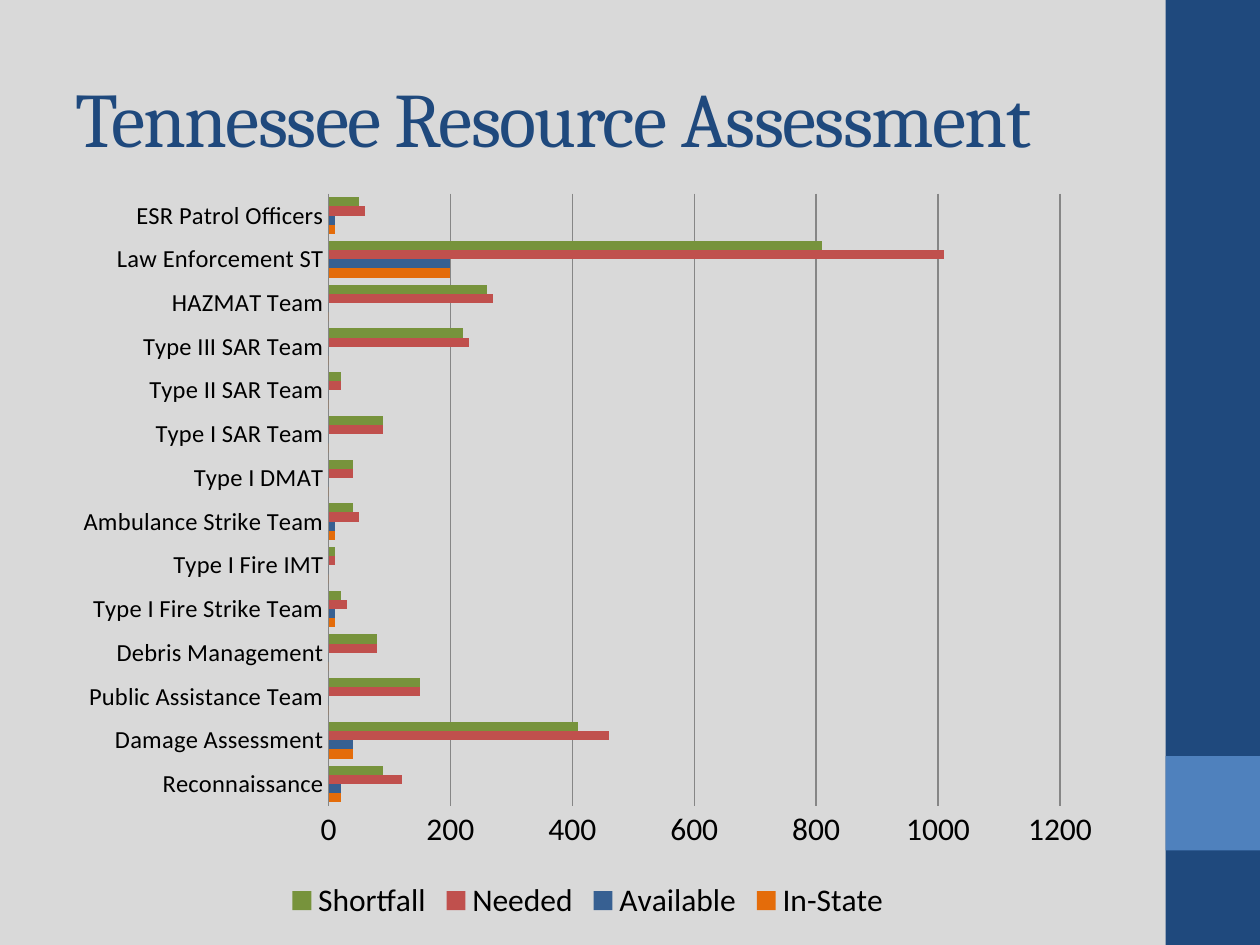
from dataclasses import dataclass

from lxml import etree
from pptx import Presentation
from pptx import util as u
from pptx.chart.data import CategoryChartData
from pptx.dml.color import RGBColor
from pptx.enum import chart as ch, shapes, text
from pptx.oxml.ns import qn

WIDTH, HEIGHT = u.Inches(10), u.Inches(7.5)
COLORS = {
    "background": "D9D9D9", "navy": "1F497D", "blue": "4F81BD",
    "text": "000000", "grid": "868686",
    "in_state": "E46C0A", "available": "376092",
    "needed": "C0504D", "shortfall": "77933C",
}


@dataclass
class Box:
    """Place and size as shares of the slide."""
    x: float
    y: float
    w: float
    h: float

    def emu(self) -> tuple[int, int, int, int]:
        return (int(self.x * WIDTH), int(self.y * HEIGHT),
                int(self.w * WIDTH), int(self.h * HEIGHT))


@dataclass
class Band:
    box: Box
    color: str


@dataclass
class Series:
    name: str
    color: str
    values: list[int]


BANDS = [
    Band(Box(0.925, 0, 0.075, 1), "navy"),
    Band(Box(0.925, 0.8, 0.075, 0.1), "blue"),
]
TITLE_BOX = Box(0.05, 0.04, 0.833, 1 / 6)
CHART_BOX = Box(0.05, 0.19, 0.833, 0.79)
PLOT_BOX = Box(0.253, 0.019, 0.697, 0.82)  # shares of the chart

CATEGORIES = [
    "Reconnaissance", "Damage Assessment", "Public Assistance Team",
    "Debris Management", "Type I Fire Strike Team", "Type I Fire IMT",
    "Ambulance Strike Team", "Type I DMAT", "Type I SAR Team",
    "Type II SAR Team", "Type III SAR Team", "HAZMAT Team",
    "Law Enforcement ST", "ESR Patrol Officers",
]
ON_HAND = [20, 40, 0, 0, 10, 0, 10, 0, 0, 0, 0, 0, 200, 10]
SERIES = [
    Series("In-State", "in_state", ON_HAND),
    Series("Available", "available", ON_HAND),
    Series("Needed", "needed",
           [120, 460, 150, 80, 30, 10, 50, 40, 90, 20, 230, 270, 1010, 60]),
    Series("Shortfall", "shortfall",
           [90, 410, 150, 80, 20, 10, 40, 40, 90, 20, 220, 260, 810, 50]),
]


def rgb(name: str) -> RGBColor:
    return RGBColor.from_string(COLORS[name])


def set_fill(fill, color: str) -> None:
    fill.solid()
    fill.fore_color.rgb = rgb(color)


def set_font(font, name: str, size: float, color: str) -> None:
    font.name, font.size, font.bold = name, u.Pt(size), False
    font.color.rgb = rgb(color)


def add_band(slide, band: Band) -> None:
    sp = slide.shapes.add_shape(shapes.MSO_SHAPE.RECTANGLE, *band.box.emu())
    sp.shadow.inherit = False
    set_fill(sp.fill, band.color)
    sp.line.fill.background()


def add_title(slide, wording: str) -> None:
    tf = slide.shapes.add_textbox(*TITLE_BOX.emu()).text_frame
    tf.word_wrap = True
    tf.vertical_anchor = text.MSO_ANCHOR.MIDDLE
    p = tf.paragraphs[0]
    r = p.add_run()
    r.text = wording
    set_font(p.font, "Cambria", 44, "navy")
    set_font(r.font, "Cambria", 44, "navy")
    r.font._element.set("spc", "-100")


def place_plot(chart, box: Box) -> None:
    """Fix the inner plot area, so the axis labels fall outside it."""
    plot_area = chart._chartSpace.chart.plotArea
    for old in plot_area.findall(qn("c:layout")):
        plot_area.remove(old)
    layout = etree.Element(qn("c:layout"))
    manual = etree.SubElement(layout, qn("c:manualLayout"))
    settings = {"layoutTarget": "inner", "xMode": "edge", "yMode": "edge",
                "x": box.x, "y": box.y, "w": box.w, "h": box.h}
    for tag, value in settings.items():
        etree.SubElement(manual, qn(f"c:{tag}")).set("val", str(value))
    plot_area.insert(0, layout)


def add_resource_chart(slide) -> None:
    data = CategoryChartData()
    data.categories = CATEGORIES
    for s in SERIES:
        data.add_series(s.name, s.values)
    chart = slide.shapes.add_chart(
        ch.XL_CHART_TYPE.BAR_CLUSTERED, *CHART_BOX.emu(), data).chart
    set_font(chart.font, "Calibri", 18, "text")
    chart.has_title = False
    chart.has_legend = True
    chart.legend.position = ch.XL_LEGEND_POSITION.BOTTOM
    chart.legend.include_in_layout = False

    plot = chart.plots[0]
    plot.gap_width, plot.overlap, plot.vary_by_categories = 75, 0, False
    for bars, s in zip(plot.series, SERIES):
        set_fill(bars.format.fill, s.color)

    cat, val = chart.category_axis, chart.value_axis
    for axis in (cat, val):
        axis.major_tick_mark = axis.minor_tick_mark = ch.XL_TICK_MARK.NONE
    set_font(cat.tick_labels.font, "Calibri", 14, "text")
    cat.has_major_gridlines = False
    val.has_major_gridlines = True
    val.minimum_scale, val.maximum_scale, val.major_unit = 0, 1200, 200
    val.format.line.fill.background()
    for line in (cat.format.line, val.major_gridlines.format.line):
        line.color.rgb = rgb("grid")
        line.width = u.Pt(0.75)
    place_plot(chart, PLOT_BOX)


def main() -> None:
    prs = Presentation()
    prs.slide_width, prs.slide_height = WIDTH, HEIGHT
    slide = prs.slides.add_slide(prs.slide_layouts[6])
    set_fill(slide.background.fill, "background")
    for band in BANDS:
        add_band(slide, band)
    add_title(slide, "Tennessee Resource Assessment")
    add_resource_chart(slide)
    prs.save("out.pptx")


if __name__ == "__main__":
    main()
